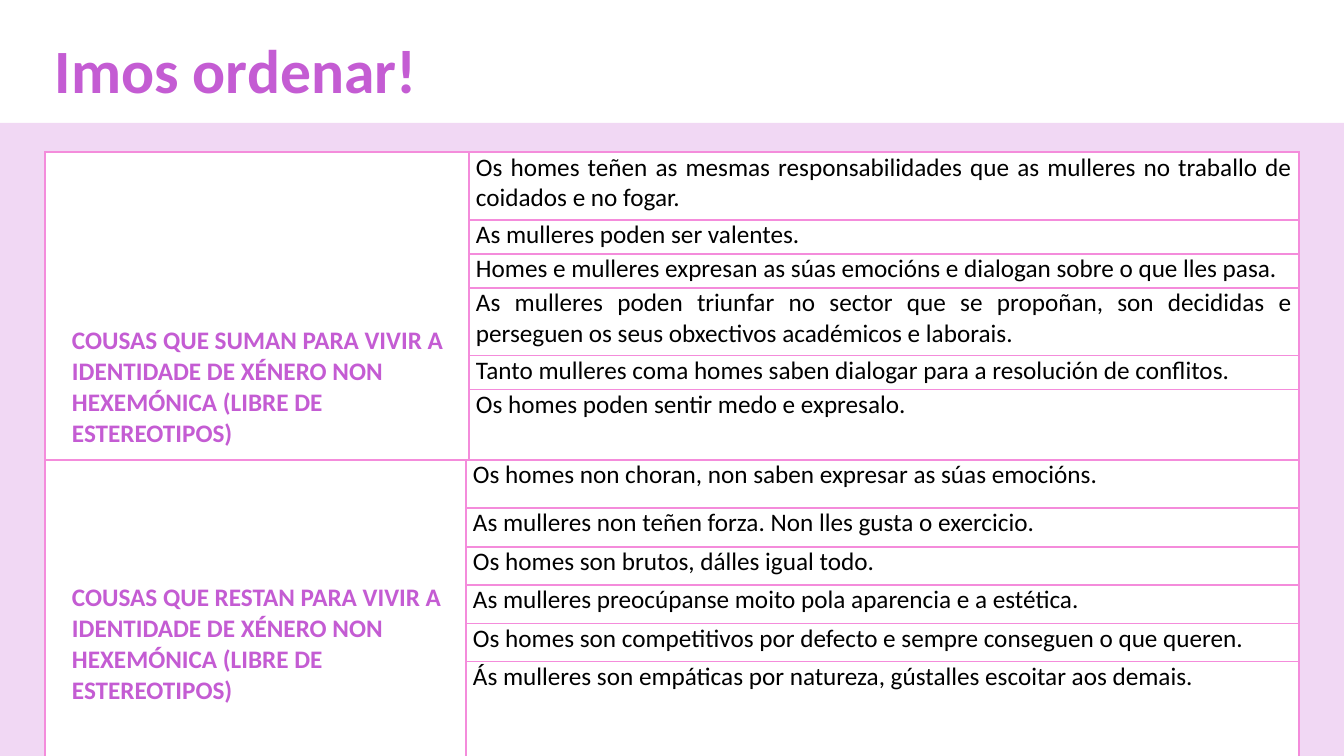
import pptx
import pptx.util
import pptx.dml.color
import pptx.enum.shapes
import pptx.enum.text
from lxml import etree

PX = 914400 / 100.8
DRAWING = "http://schemas.openxmlformats.org/drawingml/2006/main"


def px(length):
    return pptx.util.Emu(round(length * PX))


def write(frame, words, size, colour, bold):
    paragraph = frame.paragraphs[0]
    run = paragraph.add_run()
    run.text = words
    run.font.size = pptx.util.Pt(size)
    run.font.name = "Calibri"
    run.font.bold = bold
    run.font.color.rgb = pptx.dml.color.RGBColor.from_string(colour)
    return paragraph


PURPLE, LILAC, PINK = "C45CD3", "F1D8F4", "F48CDB"

deck = pptx.Presentation()
deck.slide_width, deck.slide_height = px(1344), px(756)
slide = deck.slides.add_slide(deck.slide_layouts[6])

backdrop = slide.shapes.add_shape(
    pptx.enum.shapes.MSO_SHAPE.RECTANGLE, px(0), px(123), px(1362), px(633))
backdrop.shadow.inherit = False
backdrop.fill.solid()
backdrop.fill.fore_color.rgb = pptx.dml.color.RGBColor.from_string(LILAC)
backdrop.line.fill.background()

title = slide.shapes.add_textbox(px(45), px(44), px(1159), px(60)).text_frame
title.word_wrap = True
title.vertical_anchor = pptx.enum.text.MSO_ANCHOR.MIDDLE
write(title, "Imos ordenar!", 44, PURPLE, True).line_spacing = 0.9

groups = [
    (152, 424, 56, [68, 34, 34, 68, 34, 69],
     "COUSAS QUE SUMAN PARA VIVIR A IDENTIDADE DE XÉNERO NON HEXEMÓNICA (LIBRE DE ESTEREOTIPOS)",
     ["Os homes teñen as mesmas responsabilidades que as mulleres no traballo de coidados e no fogar.",
      "As mulleres poden ser valentes.",
      "Homes e mulleres expresan as súas emocións e dialogan sobre o que lles pasa.",
      "As mulleres poden triunfar no sector que se propoñan, son decididas e perseguen os seus obxectivos académicos e laborais.",
      "Tanto mulleres coma homes saben dialogar para a resolución de conflitos.",
      "Os homes poden sentir medo e expresalo."]),
    (460, 421, 23, [48, 39, 38, 39, 38, 102],
     "COUSAS QUE RESTAN PARA VIVIR A IDENTIDADE DE XÉNERO NON HEXEMÓNICA (LIBRE DE ESTEREOTIPOS)",
     ["Os homes non choran, non saben expresar as súas emocións.",
      "As mulleres non teñen forza. Non lles gusta o exercicio.",
      "Os homes son brutos, dálles igual todo.",
      "As mulleres preocúpanse moito pola aparencia e a estética.",
      "Os homes son competitivos por defecto e sempre conseguen o que queren.",
      "Ás mulleres son empáticas por natureza, gústalles escoitar aos demais."]),
]

for top, heading_width, heading_drop, heights, heading, statements in groups:
    table = slide.shapes.add_table(
        len(statements), 2, px(45), px(top), px(1254), px(sum(heights))).table
    table.first_row = table.horz_banding = False
    table.columns[0].width = px(heading_width)
    table.columns[1].width = px(1254 - heading_width)
    for row, height in zip(table.rows, heights):
        row.height = px(height)

    for cell in table.iter_cells():
        cell.margin_left = cell.margin_right = px(7)
        cell.margin_top = cell.margin_bottom = 0
        for side in ("lnL", "lnR", "lnT", "lnB"):
            border = etree.SubElement(
                cell._tc.get_or_add_tcPr(), f"{{{DRAWING}}}{side}", w="12700")
            paint = etree.SubElement(border, f"{{{DRAWING}}}solidFill")
            etree.SubElement(paint, f"{{{DRAWING}}}srgbClr", val=PINK)
        cell.fill.solid()
        cell.fill.fore_color.rgb = pptx.dml.color.RGBColor.from_string("FFFFFF")

    heading_cell = table.cell(0, 0)
    heading_cell.merge(table.cell(len(statements) - 1, 0))
    heading_cell.vertical_anchor = pptx.enum.text.MSO_ANCHOR.MIDDLE
    heading_cell.margin_left = px(27)
    heading_cell.margin_top = px(heading_drop)
    write(heading_cell.text_frame, heading, 18, PURPLE, True)

    for index, statement in enumerate(statements):
        paragraph = write(table.cell(index, 1).text_frame, statement, 18, "000000", False)
        paragraph.alignment = pptx.enum.text.PP_ALIGN.JUSTIFY

deck.save("out.pptx")
